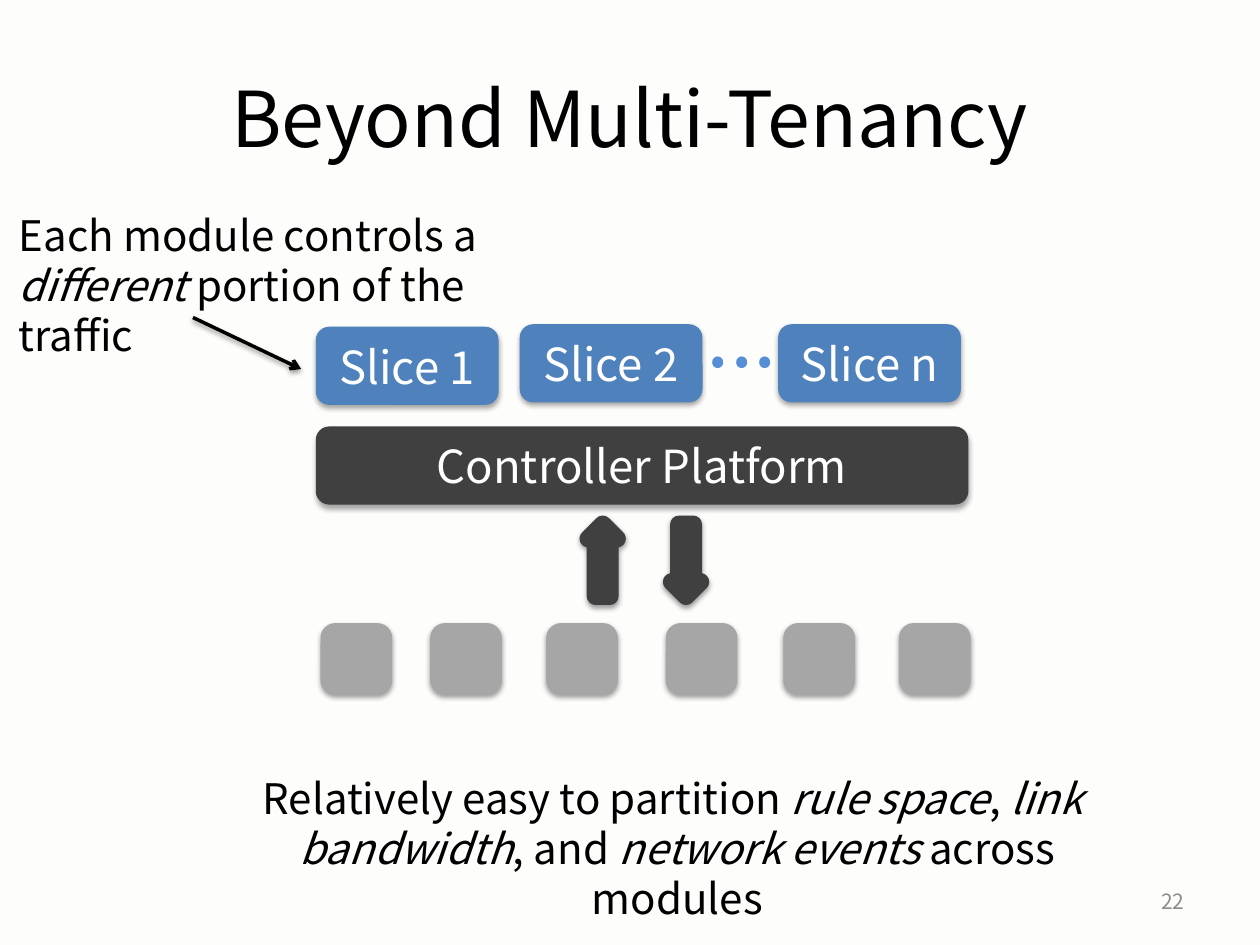
"""Build the slide about slicing a controller platform beyond multi-tenancy."""
import lxml.etree
import pptx
import pptx.dml.color
import pptx.enum.shapes
import pptx.enum.text
import pptx.oxml
import pptx.oxml.ns
import pptx.util

Cm = pptx.util.Cm
Pt = pptx.util.Pt
RGB = pptx.dml.color.RGBColor.from_string
KIND = pptx.enum.shapes.MSO_SHAPE
ALIGN = pptx.enum.text.PP_ALIGN
ANCHOR = pptx.enum.text.MSO_ANCHOR

COLOURS = {
    "paper": "FDFDFC", "text": "000000", "number": "8C8C8C", "label": "FFFFFF",
    "platform": "404040", "switch": "A6A6A6", "slice": "4F81BD", "dots": "558ED5",
}


def write(shape, spans, size, colour, align, anchor, wrap=True):
    frame = shape.text_frame
    for name, value in {"word_wrap": wrap, "vertical_anchor": anchor}.items():
        setattr(frame, name, value)
    para = frame.paragraphs[0]
    para.alignment = align
    for text, italic in spans:
        for index, part in enumerate(text.split("\n")):
            if index:
                para.add_line_break()
            span = para.add_run()
            span.text = part
            font_format = {"name": "Noto Sans CJK JP", "size": Pt(size), "italic": italic}
            for name, value in font_format.items():
                setattr(span.font, name, value)
            span.font.color.rgb = RGB(COLOURS[colour])


def add_shadow(shape, opacity, distance):
    properties = shape._element.spPr
    for old in properties.findall(pptx.oxml.ns.qn("a:effectLst")):
        properties.remove(old)
    properties.append(pptx.oxml.parse_xml(
        f'<a:effectLst {pptx.oxml.ns.nsdecls("a")}>'
        f'<a:outerShdw blurRad="{Pt(3.1)}" dist="{Pt(distance)}" dir="5400000" rotWithShape="0">'
        f'<a:srgbClr val="000000"><a:alpha val="{opacity * 1000}"/></a:srgbClr>'
        '</a:outerShdw></a:effectLst>'))


deck = pptx.Presentation()
deck.slide_width, deck.slide_height = Cm(25.4), Cm(19.05)
page = deck.slides.add_slide(deck.slide_layouts[6])
page.background.fill.solid()
page.background.fill.fore_color.rgb = RGB(COLOURS["paper"])

switches = [(KIND.ROUNDED_RECTANGLE, left, 12.65, 1.27, 1.27, 0, "switch", 5, "")
            for left in (6.55, 8.76, 11.1, 13.51, 15.88, 18.21)]
arrows = [(KIND.UP_ARROW, left, 10.57, 0.58, 1.45, turn, "platform", 10, "")
          for left, turn in ((11.86, 0), (13.54, 180))]
slices = [(KIND.ROUNDED_RECTANGLE, left, top, 3.66, 1.55, 0, "slice", 0.75, label)
          for left, top, label in ((6.38, 6.6, "Slice 1"), (10.49, 6.55, "Slice 2"),
                                   (15.7, 6.55, "Slice n"))]
platform = (KIND.ROUNDED_RECTANGLE, 6.38, 8.61, 13.13, 1.55, 0, "platform", 0.75,
            "Controller Platform")

for kind, left, top, width, height, turn, colour, line, label in [
        platform, *switches, *arrows, *slices]:
    shape = page.shapes.add_shape(kind, Cm(left), Cm(top), Cm(width), Cm(height))
    shape.rotation = turn
    shape.fill.solid()
    shape.fill.fore_color.rgb = RGB(COLOURS[colour])
    shape.line.color.rgb = RGB(COLOURS[colour])
    shape.line.width = Pt(line)
    add_shadow(shape, *((35, 1.8) if label else (38, 1.6)))
    if label:
        write(shape, [(label, False)], 26, "label", ALIGN.CENTER, ANCHOR.MIDDLE)

pointer = page.shapes.add_connector(
    pptx.enum.shapes.MSO_CONNECTOR.STRAIGHT, Cm(3.89), Cm(6.4), Cm(6.07), Cm(7.44))
pointer.line.color.rgb = RGB(COLOURS["text"])
pointer.line.width = Pt(2)
lxml.etree.SubElement(pointer.line._get_or_add_ln(), pptx.oxml.ns.qn("a:tailEnd"), type="arrow")
add_shadow(pointer, 38, 1.6)

module_note = [("Each module controls a ", False), ("different", True),
               (" portion of the traffic", False)]
partition_note = [("Relatively easy to partition ", False), ("rule space", True), (", ", False),
                  ("link \nbandwidth", True), (", and ", False), ("network events ", True),
                  ("across modules", False)]
texts = [
    ((1.27, 0.76, 22.86, 3.18), [("Beyond Multi-Tenancy", False)], 44, "text",
     ALIGN.CENTER, ANCHOR.MIDDLE, True),
    ((18.21, 17.65, 5.92, 1.02), [("22", False)], 12, "number", ALIGN.RIGHT, ANCHOR.MIDDLE, True),
    ((14, 5.59, 1.93, 2.31), [("...", False)], 48, "dots", ALIGN.LEFT, ANCHOR.TOP, False),
    ((0.13, 4.09, 11.76, 2.31), module_note, 24, "text", ALIGN.LEFT, ANCHOR.TOP, True),
    ((4.27, 15.44, 18.77, 2.31), partition_note, 24, "text", ALIGN.CENTER, ANCHOR.TOP, True),
]
for place, *content in texts:
    box = page.shapes.add_textbox(*map(Cm, place))
    write(box, *content)

deck.save("out.pptx")
